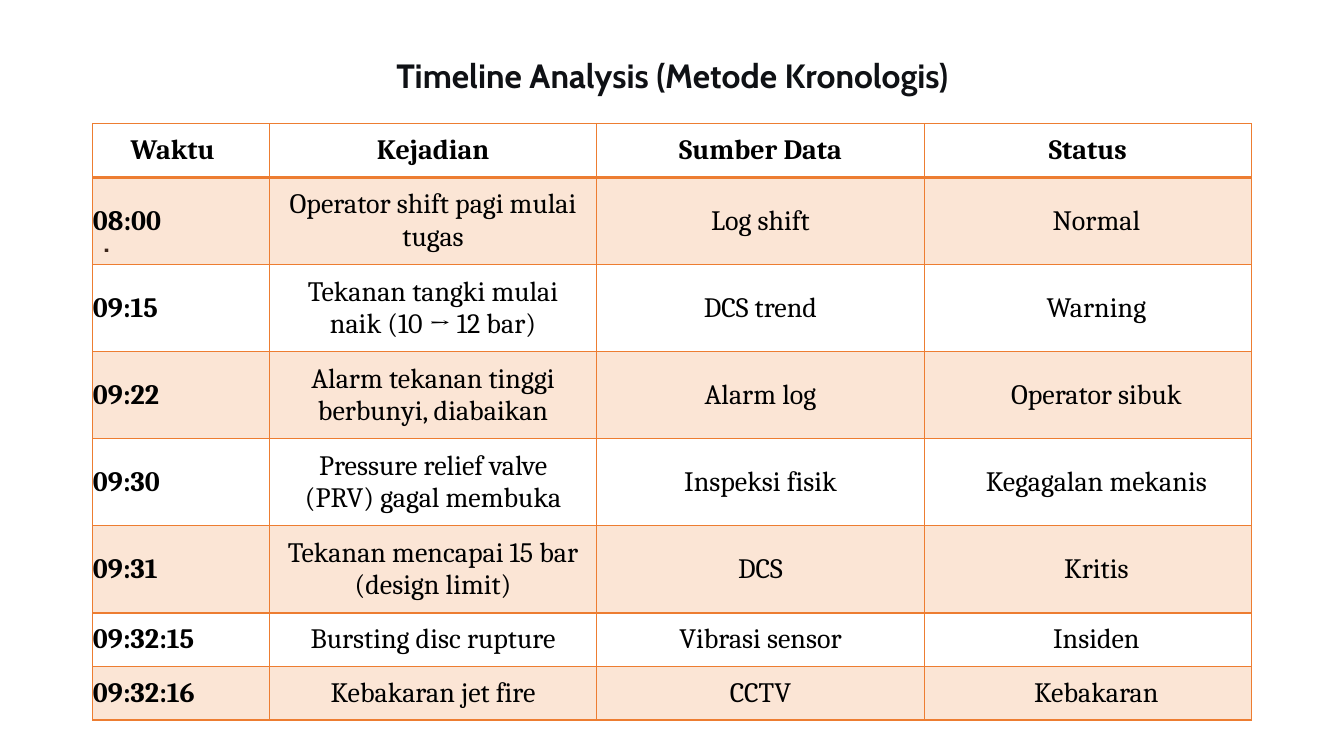
from lxml import etree
from pptx import Presentation
from pptx import util as u
from pptx.dml import color
from pptx.enum import text
from pptx.oxml import ns

ORANGE = "ED7D31"
INK = "0F1115"
LEFT, WIDTH = 2.34, 29.2
COLUMN_WIDTHS = [4.45, 8.25, 8.25, 8.25]
EVENTS = [
    ["Waktu", "Kejadian", "Sumber Data", "Status"],
    ["08:00", "Operator shift pagi mulai tugas", "Log shift", "Normal"],
    ["09:15", "Tekanan tangki mulai naik (10 → 12 bar)", "DCS trend", "Warning"],
    ["09:22", "Alarm tekanan tinggi berbunyi, diabaikan", "Alarm log", "Operator sibuk"],
    ["09:30", "Pressure relief valve (PRV) gagal membuka", "Inspeksi fisik", "Kegagalan mekanis"],
    ["09:31", "Tekanan mencapai 15 bar (design limit)", "DCS", "Kritis"],
    ["09:32:15", "Bursting disc rupture", "Vibrasi sensor", "Insiden"],
    ["09:32:16", "Kebakaran jet fire", "CCTV", "Kebakaran"],
]


def rgb(value):
    return color.RGBColor.from_string(value)


def apply(target, values):
    for name, value in values.items():
        setattr(target, name, value)


def write(paragraph, words, ink, font, layout):
    paragraph.text = words
    apply(paragraph, layout)
    letters = paragraph.runs[0].font
    apply(letters, font)
    letters.color.rgb = rgb(ink)


def add_text(slide, top, height, words, font, layout, frame_format):
    box = slide.shapes.add_textbox(u.Cm(LEFT), u.Cm(top), u.Cm(WIDTH), u.Cm(height))
    apply(box.text_frame, {"word_wrap": True, **frame_format})
    write(box.text_frame.paragraphs[0], words, INK, font, layout)


def tint(cell):
    cell.fill.solid()
    cell.fill.fore_color.rgb = rgb(ORANGE)
    shade = cell._tc.tcPr.find(".//" + ns.qn("a:srgbClr"))
    etree.SubElement(shade, ns.qn("a:alpha"), val="20000")


def draw_borders(cell, points):
    for place, (side, width) in enumerate(points.items()):
        line = etree.Element(ns.qn("a:ln" + side), w=str(int(u.Pt(width))))
        fill = etree.SubElement(line, ns.qn("a:solidFill"))
        etree.SubElement(fill, ns.qn("a:srgbClr"), val=ORANGE)
        cell._tc.tcPr.insert(place, line)


def fill_cell(cell, words, row, column):
    header, time = row == 0, column == 0
    last = column == len(COLUMN_WIDTHS) - 1
    apply(cell, {
        "vertical_anchor": text.MSO_ANCHOR.MIDDLE,
        "margin_left": u.Cm(0 if time else 0.43),
        "margin_right": u.Cm(0 if last and not header else 0.43),
        "margin_top": u.Cm(0.25),
        "margin_bottom": u.Cm(0.25),
    })
    align = text.PP_ALIGN.LEFT if time and not header else text.PP_ALIGN.CENTER
    write(cell.text_frame.paragraphs[0], words, "000000",
          {"name": "Cambria", "size": u.Pt(20), "bold": header or time},
          {"alignment": align, "space_after": u.Pt(8)})
    if row % 2:
        tint(cell)
    else:
        cell.fill.background()
    draw_borders(cell, {"L": 1, "R": 1, "T": 2 if row == 1 else 1, "B": 2 if header else 1})


def add_timeline(slide):
    heights = [2.15 if 1 <= row <= 5 else 1.35 for row in range(len(EVENTS))]
    timeline = slide.shapes.add_table(
        len(EVENTS), len(COLUMN_WIDTHS),
        u.Cm(LEFT), u.Cm(3.12), u.Cm(WIDTH), u.Cm(sum(heights))).table
    apply(timeline, {"first_row": False, "horz_banding": False})
    for column, width in zip(timeline.columns, COLUMN_WIDTHS):
        column.width = u.Cm(width)
    for row, (event, height) in enumerate(zip(EVENTS, heights)):
        timeline.rows[row].height = u.Cm(height)
        for column, words in enumerate(event):
            fill_cell(timeline.cell(row, column), words, row, column)


def main():
    deck = Presentation()
    apply(deck, {"slide_width": u.Cm(33.87), "slide_height": u.Cm(19.05)})
    slide = deck.slides.add_slide(deck.slide_layouts[6])
    add_text(slide, 1.02, 3.68, "Timeline Analysis (Metode Kronologis)",
             {"name": "Cabin", "size": u.Pt(24), "bold": True},
             {"alignment": text.PP_ALIGN.CENTER, "line_spacing": 0.9},
             {"margin_top": u.Cm(0.49)})
    add_text(slide, 5.08, 12.09, ".",
             {"name": "Cabin", "size": u.Pt(28)},
             {"alignment": text.PP_ALIGN.JUSTIFY, "line_spacing": 1.15, "space_after": u.Pt(12)},
             {"vertical_anchor": text.MSO_ANCHOR.TOP})
    add_timeline(slide)
    deck.save("out.pptx")


if __name__ == "__main__":
    main()
